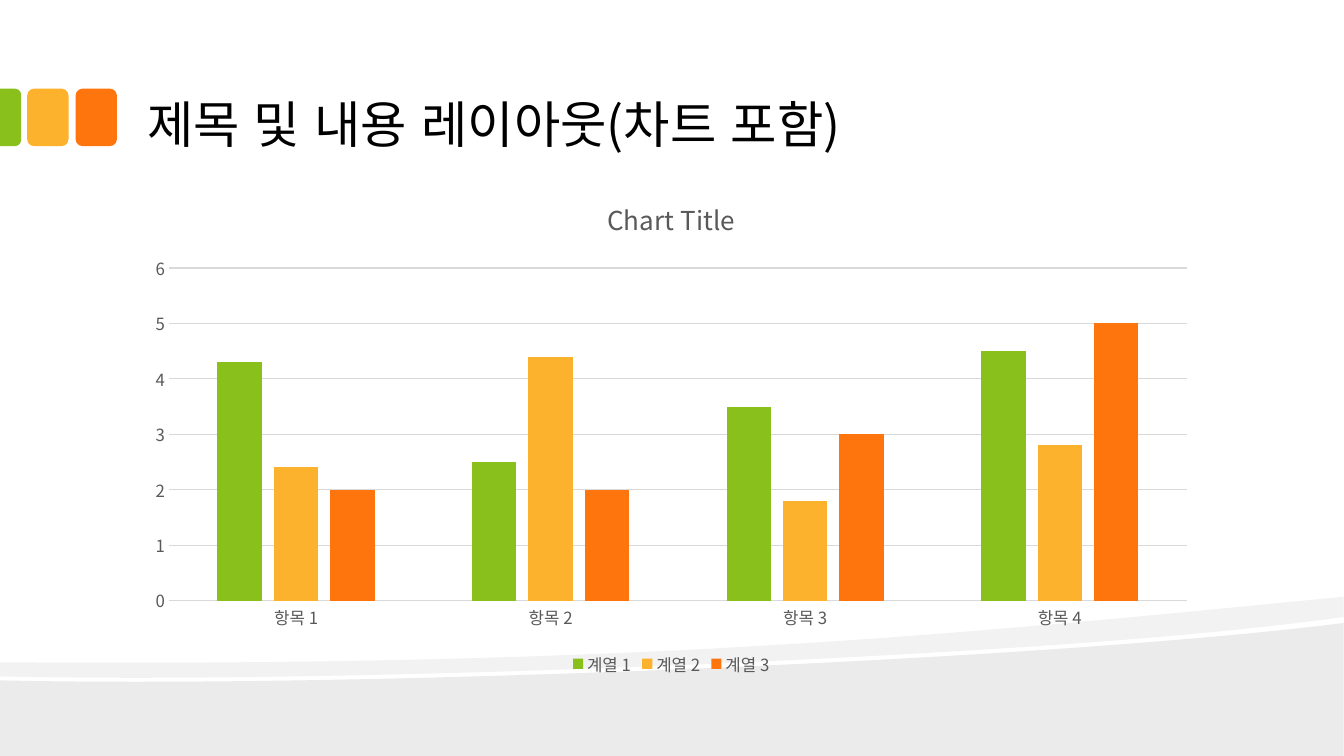
from lxml import etree
from pptx import Presentation
from pptx.chart.data import CategoryChartData
from pptx.dml.color import RGBColor
from pptx.enum.chart import XL_CHART_TYPE, XL_LEGEND_POSITION, XL_TICK_MARK
from pptx.enum.lang import MSO_LANGUAGE_ID
from pptx.enum.shapes import MSO_SHAPE
from pptx.enum.text import MSO_ANCHOR, MSO_AUTO_SIZE, PP_ALIGN
from pptx.oxml.ns import qn
from pptx.util import Inches, Pt

COLUMNS = XL_CHART_TYPE.COLUMN_CLUSTERED
LEGEND_BOTTOM = XL_LEGEND_POSITION.BOTTOM
NO_TICK = XL_TICK_MARK.NONE
KOREAN = MSO_LANGUAGE_ID.KOREAN
ROUND_TILE = MSO_SHAPE.ROUNDED_RECTANGLE
ROUND_TOP_TILE = MSO_SHAPE.ROUND_2_SAME_RECTANGLE
FONT = "Noto Sans CJK KR"
COLOURS = {
    "green": "89C01C", "yellow": "FCB22C", "orange": "FE750E",
    "wave": "EBEBEB", "ribbon": "F2F2F2",
    "title": "000000", "label": "595959", "grid": "D9D9D9",
}


def colour(name):
    return RGBColor.from_string(COLOURS[name])


def put_text(frame, text, size=12, color="label", align=PP_ALIGN.LEFT):
    frame.text = text
    paragraph = frame.paragraphs[0]
    paragraph.alignment = align
    font = paragraph.runs[0].font
    font.name, font.size, font.bold = FONT, Pt(size), False
    font.language_id = KOREAN
    font.color.rgb = colour(color)


prs = Presentation()
prs.slide_width, prs.slide_height = Inches(40 / 3), Inches(7.5)
slide = prs.slides.add_slide(prs.slide_layouts[5])

# Footer waves: a segment of one point is a line, one of three a cubic Bézier curve
WAVES = {
    "wave": [[(13.33, 6.18)], [(13.33, 7.5)], [(0, 7.5)], [(0, 6.75)],
             [(3.52, 6.83), (10.42, 6.55), (13.33, 6.18)]],
    "ribbon": [[(13.33, 5.92)], [(13.33, 6.12)],
               [(12.55, 6.23), (11.49, 6.33), (10.29, 6.41)],
               [(6.98, 6.63), (2.58, 6.77), (0, 6.71)], [(0, 6.57)],
               [(6.52, 6.62), (9.71, 6.27), (13.33, 5.92)]],
}
for wave_colour, segments in WAVES.items():
    points = [(Inches(x), Inches(y)) for segment in segments for x, y in segment]
    builder = slide.shapes.build_freeform(*points[0])
    builder.add_line_segments(points[1:], close=True)
    wave = builder.convert_to_shape()
    wave.shadow.inherit = False
    wave.fill.solid()
    wave.fill.fore_color.rgb = colour(wave_colour)
    wave.line.fill.background()
    steps = iter(list(wave.element.iter(qn("a:lnTo"))))
    for segment in segments[1:]:
        lines = [next(steps) for _ in segment]
        if len(lines) == 3:
            curve = etree.Element(qn("a:cubicBezTo"))
            lines[0].addprevious(curve)
            for line in lines:
                curve.append(line[0])
                line.getparent().remove(line)

# Three tiles beside the title; the first is cut by the slide edge
for preset, left, top, width, height, turn, tile_colour in (
        (ROUND_TILE, 0.75, 0.88, 0.41, 0.57, 0, "orange"),
        (ROUND_TILE, 0.27, 0.88, 0.41, 0.57, 0, "yellow"),
        (ROUND_TOP_TILE, -0.18, 1.06, 0.57, 0.21, 90, "green")):
    tile = slide.shapes.add_shape(preset, Inches(left), Inches(top), Inches(width), Inches(height))
    tile.rotation = turn
    if preset == ROUND_TOP_TILE:
        tile.adjustments[0] = 0.29
    tile.shadow.inherit = False
    tile.fill.solid()
    tile.fill.fore_color.rgb = colour(tile_colour)
    tile.line.fill.background()

heading = slide.shapes.title
heading.left, heading.top = Inches(1.33), Inches(0.17)
heading.width, heading.height = Inches(10.66), Inches(1.42)
heading_frame = heading.text_frame
heading_frame.word_wrap = True
heading_frame.auto_size = MSO_AUTO_SIZE.NONE
heading_frame.vertical_anchor = MSO_ANCHOR.BOTTOM
heading_frame.margin_left = heading_frame.margin_right = Inches(0.13)
heading_frame.margin_top = heading_frame.margin_bottom = Inches(0.07)
put_text(heading_frame, "제목 및 내용 레이아웃(차트 포함)", size=36, color="title")
for run_format in heading.element.iter(qn("a:rPr")):
    run_format.set("kern", "0")

SERIES = (
    ("계열 1", (4.3, 2.5, 3.5, 4.5), "green"),
    ("계열 2", (2.4, 4.4, 1.8, 2.8), "yellow"),
    ("계열 3", (2, 2, 3, 5), "orange"),
)
chart_data = CategoryChartData()
chart_data.categories = [f"항목 {number}" for number in range(1, 5)]
for name, values, _ in SERIES:
    chart_data.add_series(name, values)
chart = slide.shapes.add_chart(COLUMNS, Inches(1.33), Inches(1.75), Inches(10.66), Inches(5),
                               chart_data).chart
chart.font.name, chart.font.size = FONT, Pt(12)
chart.font.color.rgb = colour("label")
chart.has_title = True
put_text(chart.chart_title.text_frame, "Chart Title", size=18.6, align=PP_ALIGN.CENTER)
chart.chart_title.include_in_layout = False
chart.has_legend = True
chart.legend.position = LEGEND_BOTTOM
chart.legend.include_in_layout = False

plot = chart.plots[0]
plot.gap_width, plot.overlap = 219, -27
plot.vary_by_categories = False
for series, (_, _, series_colour) in zip(plot.series, SERIES):
    series.format.fill.solid()
    series.format.fill.fore_color.rgb = colour(series_colour)

categories, scale = chart.category_axis, chart.value_axis
for axis in (categories, scale):
    axis.major_tick_mark = axis.minor_tick_mark = NO_TICK
scale.minimum_scale, scale.maximum_scale, scale.major_unit = 0, 6, 1
scale.has_major_gridlines = True
scale.format.line.fill.background()
for line in (categories.format.line, scale.major_gridlines.format.line):
    line.color.rgb = colour("grid")
    line.width = Pt(0.75)

# Korean text takes its typeface from the East Asian font slot
for root in (heading.element, chart.element):
    for latin in list(root.iter(qn("a:latin"))):
        east_asian = etree.Element(qn("a:ea"), typeface=FONT)
        latin.addnext(east_asian)

prs.save("out.pptx")
